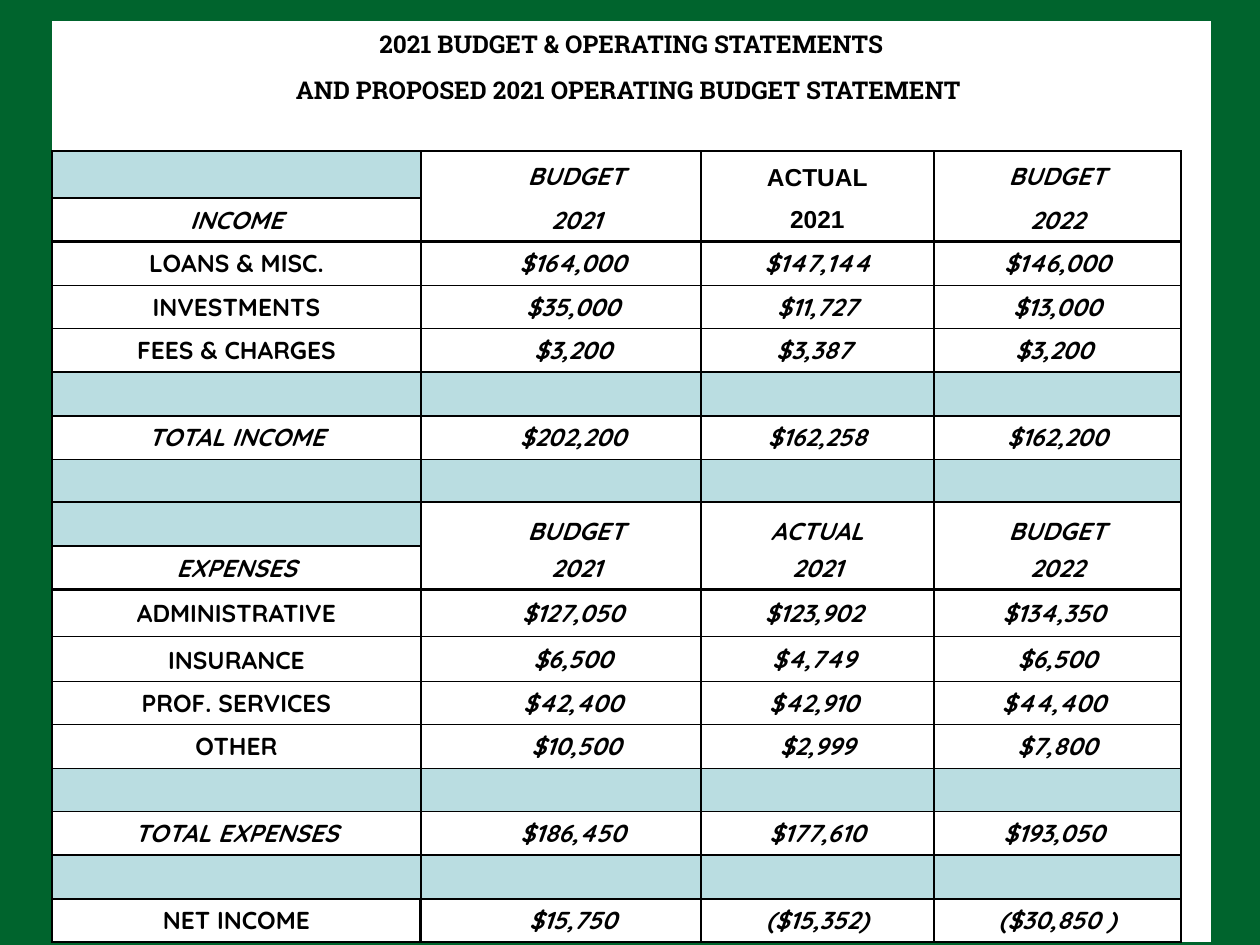
from dataclasses import dataclass

from lxml import etree
from pptx import Presentation
from pptx.dml.color import RGBColor
from pptx.enum.text import MSO_ANCHOR, PP_ALIGN
from pptx.oxml.ns import qn
from pptx.util import Emu, Pt

CENTER = PP_ALIGN.CENTER
MIDDLE, BOTTOM = MSO_ANCHOR.MIDDLE, MSO_ANCHOR.BOTTOM


@dataclass(frozen=True)
class Theme:
    back: str = "00642D"
    paper: str = "FFFFFF"
    band: str = "BADDE1"
    ink: str = "000000"
    size: int = 14
    title: str = "Roboto Slab"
    body: str = "Quicksand"
    plain: str = "Arial"


THEME = Theme()
COLS = [369, 31, 249, 233, 247, 29]
LAST = len(COLS) - 1
HEADS = ("BUDGET", "ACTUAL", "BUDGET")
YEARS = ("2021", "2021", "2022")

# Height, kind of row, label, three values
ROWS = [
    (46, "title", "2021 BUDGET & OPERATING STATEMENTS"),
    (45, "title", "AND PROPOSED 2021 OPERATING BUDGET STATEMENT "),
    (39, "gap", ""),
    (47, "head", "", *HEADS),
    (43, "year", "INCOME", *YEARS),
    (44, "line", "LOANS & MISC.", "$164,000 ", "$147,144", "$146,000"),
    (43, "line", "INVESTMENTS", "$35,000 ", "$11,727", "$13,000"),
    (43, "line", "FEES & CHARGES", "$3,200 ", "$3,387 ", "$3,200 "),
    (44, "band", ""),
    (43, "total", "TOTAL INCOME", "$202,200 ", "$162,258", "$162,200"),
    (43, "band", ""),
    (44, "head", "", *HEADS),
    (43, "year", "EXPENSES", *YEARS),
    (47, "line", "ADMINISTRATIVE", "$127,050 ", "$123,902 ", "$134,350 "),
    (45, "line", "INSURANCE", "$6,500 ", "$4,749 ", "$6,500"),
    (43, "line", "PROF. SERVICES", "$42,400 ", "$42,910 ", "$44,400 "),
    (44, "line", "OTHER", "$10,500", "$2,999", "$7,800"),
    (43, "band", ""),
    (43, "total", "TOTAL EXPENSES", "$186,450 ", "$177,610", "$193,050 "),
    (44, "band", ""),
    (43, "line", "NET INCOME", "$15,750 ", "($15,352)", "($30,850 )"),
]
LOW = ("INCOME", "LOANS & MISC.", "INSURANCE")
FIRST = range(3, 5)  # header rows of the income part


def px(n):
    return Emu(round(n * 914400 / 126))


def sides(row, col):
    """Border widths in points for one cell, by side."""
    kind = ROWS[row][1]
    if kind == "title" or (kind == "gap" and col == LAST):
        return {}
    if kind == "gap":
        return {"B": 1}
    if col == LAST:
        return {"L": 1}
    edge = dict.fromkeys("LRTB", 1)
    if kind == "year":
        edge["B"] = 2
    if ROWS[row - 1][1] == "year":
        edge["T"] = 2
    # Heads and years read as one cell, as do the two budget columns
    if col and kind in ("head", "year"):
        del edge["B" if kind == "head" else "T"]
    if col in (1, 2):
        del edge["R" if col == 1 else "L"]
    # Heavy rule after the last label
    if row == len(ROWS) - 1 and col < 2:
        edge["LR"[1 - col]] = 2
    return edge


def rule(cell, edge):
    prop = cell._tc.get_or_add_tcPr()
    for side in "LRTB":
        line = etree.SubElement(prop, qn("a:ln" + side))
        if side in edge:
            line.set("w", str(Pt(edge[side])))
            fill = etree.SubElement(line, qn("a:solidFill"))
            etree.SubElement(fill, qn("a:srgbClr")).set("val", THEME.ink)
        else:
            etree.SubElement(line, qn("a:noFill"))


def write(cell, text, face, slant):
    cell.text_frame.text = text
    para = cell.text_frame.paragraphs[0]
    para.alignment = CENTER
    font = para.runs[0].font
    font.name, font.size = face, Pt(THEME.size)
    font.bold, font.italic = True, slant
    font.color.rgb = RGBColor.from_string(THEME.ink)


def dress(cell, row, col):
    """Borders, fill and text of one cell."""
    _, kind, label, *vals = ROWS[row]
    rule(cell, sides(row, col))
    tint = (kind == "band" and col < LAST) or (kind == "head" and col == 0)
    cell.fill.solid()
    cell.fill.fore_color.rgb = RGBColor.from_string(
        THEME.band if tint else THEME.paper)

    text = dict(zip((0, 2, 3, 4), (label, *vals))).get(col, "")
    if not text or (col and row not in FIRST):
        cell.margin_left = cell.margin_right = 0
        cell.margin_top = cell.margin_bottom = 0
    if not text:
        return
    low = text in LOW or kind == "head"
    cell.vertical_anchor = BOTTOM if low else MIDDLE
    if kind == "title":
        write(cell, text, THEME.title, False)
    elif row in FIRST and col == 3:
        write(cell, text, THEME.plain, False)
    else:
        write(cell, text, THEME.body, col > 0 or kind != "line")


def budget(slide, left, top, wide, high):
    frame = slide.shapes.add_table(
        len(ROWS), len(COLS), px(left), px(top), px(wide), px(high))
    table = frame.table
    table.first_row = table.horz_banding = False
    for col, size in zip(table.columns, COLS):
        col.width = px(size)
    for row, data in zip(table.rows, ROWS):
        row.height = px(data[0])
    for row, data in enumerate(ROWS):
        for col in range(len(COLS)):
            dress(table.cell(row, col), row, col)
        if data[1] == "title":
            table.cell(row, 0).merge(table.cell(row, LAST))


def main():
    deck = Presentation()
    deck.slide_width, deck.slide_height = px(1260), px(945)
    slide = deck.slides.add_slide(deck.slide_layouts[6])
    # Green page behind the statement
    back = slide.background.fill
    back.solid()
    back.fore_color.rgb = RGBColor.from_string(THEME.back)
    budget(slide, 52, 21, sum(COLS), sum(row[0] for row in ROWS))
    deck.save("out.pptx")


if __name__ == "__main__":
    main()
